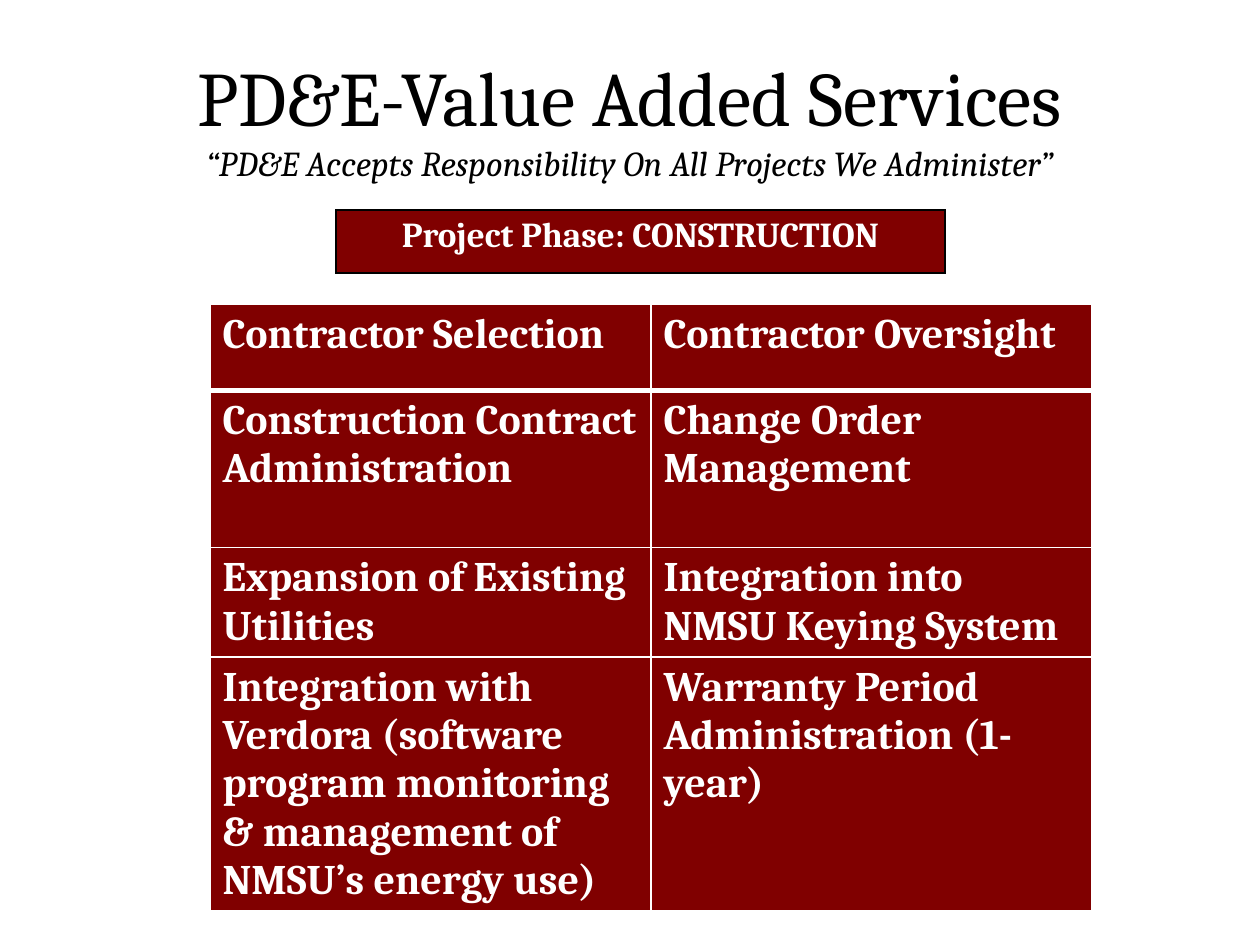
from lxml import etree
from pptx import Presentation
from pptx.dml.color import RGBColor
from pptx.enum.text import MSO_ANCHOR, PP_ALIGN
from pptx.oxml.ns import qn
from pptx.util import Pt

CENTER = PP_ALIGN.CENTER
LEFT = PP_ALIGN.LEFT
MIDDLE = MSO_ANCHOR.MIDDLE
TITLE_ONLY = 5


def color(value):
    return RGBColor.from_string(value)


class PageBuilder:
    font_name = "Cambria"
    ink = "000000"
    paper = "FFFFFF"
    maroon = "800000"

    def __init__(self, deck):
        self.page = deck.slides.add_slide(deck.slide_layouts[TITLE_ONLY])

    def format_span(self, span, size, ink, bold=False, italic=False):
        span.font.name = self.font_name
        span.font.size = Pt(size)
        span.font.bold = bold
        span.font.italic = italic
        span.font.color.rgb = color(ink)

    def title(self, heading, motto, left, top, width, height):
        box = self.page.shapes.title
        box.left, box.top, box.width, box.height = map(Pt, (left, top, width, height))
        frame = box.text_frame
        frame.text = f"{heading}\v{motto}"
        frame.vertical_anchor = MIDDLE
        para = frame.paragraphs[0]
        para.alignment = CENTER
        heading_span, motto_span = para.runs
        self.format_span(heading_span, 44, self.ink)
        self.format_span(motto_span, 20, self.ink, italic=True)

    def border(self, cell, side, ink, width):
        properties = cell._tc.get_or_add_tcPr()
        line = etree.SubElement(properties, qn(f"a:ln{side}"), w=str(Pt(width)))
        fill = etree.SubElement(line, qn("a:solidFill"))
        etree.SubElement(fill, qn("a:srgbClr"), val=ink)

    def table(self, rows, left, top, width, heights, size, alignment, ink, line, header_line):
        frame = self.page.shapes.add_table(
            len(rows), len(rows[0]), Pt(left), Pt(top), Pt(width), Pt(sum(heights))
        )
        table = frame.table
        table.first_row = False
        table.horz_banding = False
        for row, height in zip(table.rows, heights):
            row.height = Pt(height)
        for row_index, texts in enumerate(rows):
            for column_index, text in enumerate(texts):
                cell = table.cell(row_index, column_index)
                cell.text = text
                para = cell.text_frame.paragraphs[0]
                para.alignment = alignment
                self.format_span(para.runs[0], size, self.paper, bold=True)
                widths = {
                    "L": line,
                    "R": line,
                    "T": header_line if row_index == 1 else line,
                    "B": header_line if row_index == 0 else line,
                }
                for side, side_width in widths.items():
                    self.border(cell, side, ink, side_width)
                cell.fill.solid()
                cell.fill.fore_color.rgb = color(self.maroon)


def main():
    deck = Presentation()
    deck.slide_width = Pt(720)
    deck.slide_height = Pt(540)
    builder = PageBuilder(deck)
    builder.title(
        "PD&E-Value Added Services",
        "“PD&E Accepts Responsibility On All Projects We Administer”",
        36, 21.6, 648, 90,
    )
    builder.table(
        [["Project Phase: CONSTRUCTION"]],
        192, 120, 348, [36], 20, CENTER, builder.ink, 0.75, 0.75,
    )
    services = [
        ["Contractor Selection", "Contractor Oversight"],
        ["Construction Contract Administration", "Change Order Management"],
        ["Expansion of Existing Utilities", "Integration into NMSU Keying System"],
        [
            "Integration with Verdora (software program monitoring "
            "& management of NMSU’s energy use)",
            "Warranty Period Administration (1-year)",
        ],
    ]
    builder.table(
        services, 120, 174, 504, [49, 90, 62, 145], 24, LEFT, builder.paper, 1, 3,
    )
    deck.save("out.pptx")


if __name__ == "__main__":
    main()
